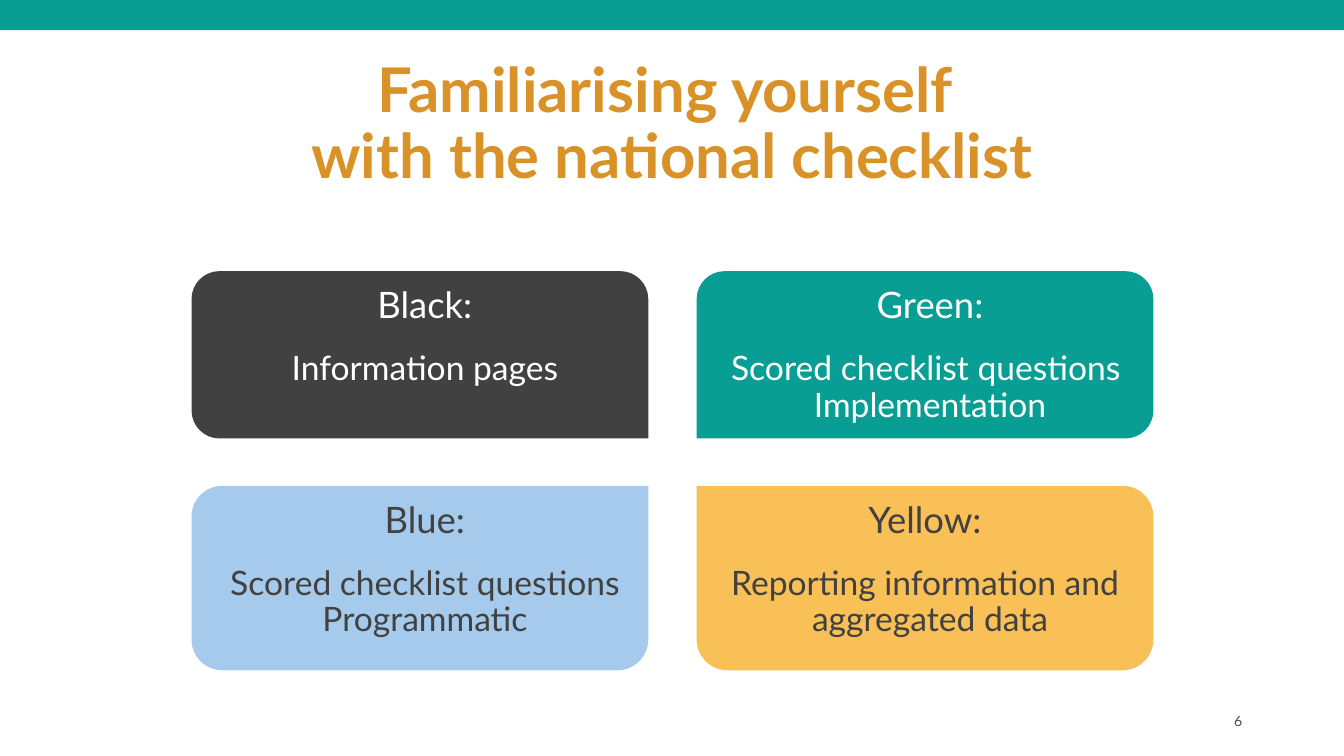
from lxml import etree
from pptx import Presentation
from pptx.dml.color import RGBColor
from pptx.enum.shapes import MSO_SHAPE
from pptx.enum.text import MSO_ANCHOR, PP_ALIGN
from pptx.oxml.ns import qn
from pptx.util import Inches, Pt

TEAL = RGBColor(0x09, 0x9E, 0x93)
GOLD = RGBColor(0xD9, 0x92, 0x28)
CHARCOAL = RGBColor(0x41, 0x41, 0x41)
SKY = RGBColor(0xA6, 0xCA, 0xEC)
YELLOW = RGBColor(0xF8, 0xC0, 0x56)
GREY = RGBColor(0x4A, 0x4A, 0x4C)
WHITE = RGBColor(0xFF, 0xFF, 0xFF)

FONT = "Lato"
CENTER, RIGHT = PP_ALIGN.CENTER, PP_ALIGN.RIGHT
TOP, MIDDLE = MSO_ANCHOR.TOP, MSO_ANCHOR.MIDDLE
RECTANGLE = MSO_SHAPE.RECTANGLE

CORNERS = ["top left", "top right", "bottom right", "bottom left"]
ARC_HANDLE = 0.55  # Bézier handle of a quarter circle, as a share of its radius

CARD_LEFT, CARD_WIDTH, COLUMN_STEP = 1.9, 4.53, 5.01
# Each row: top, height, then its cards from left to right:
# heading, detail, fill, text colour, square corner, first-line indent
CARD_ROWS = [
    (2.69, 1.66, [
        ("Black:", "Information pages", CHARCOAL, WHITE, "bottom right", 0),
        ("Green:", "Scored checklist questions \vImplementation",
         TEAL, WHITE, "bottom left", 0),
    ]),
    (4.82, 1.83, [
        ("Blue:", "Scored checklist questions Programmatic",
         SKY, CHARCOAL, "top right", 0),
        ("Yellow:", "Reporting information and aggregated data",
         YELLOW, CHARCOAL, "top left", -0.1),
    ]),
]


def set_attributes(target, values):
    for attribute, value in values.items():
        setattr(target, attribute, value)


def format_paragraph(paragraph, size, color, bold=False, **layout):
    set_attributes(paragraph, layout)
    set_attributes(paragraph.font, {"name": FONT, "size": Pt(size), "bold": bold})
    paragraph.font.color.rgb = color


def indent_paragraph(paragraph, left, first_line):
    properties = paragraph._p.get_or_add_pPr()
    properties.set("marL", str(Inches(left)))
    properties.set("indent", str(Inches(first_line)))


def paint(shape, color):
    shape.shadow.inherit = False
    shape.fill.solid()
    shape.fill.fore_color.rgb = color
    shape.line.fill.background()


def card_outline(left, top, width, height, square_corner):
    """Return the square corner, then start, two handles and end of each arc."""
    radius = height / 6
    handle = radius * (1 - ARC_HANDLE)
    right, bottom = left + width, top + height
    places = [(left, top), (right, top), (right, bottom), (left, bottom)]
    # Clockwise directions along the edge that leaves each corner
    directions = [(1, 0), (0, 1), (-1, 0), (0, -1)]
    first = CORNERS.index(square_corner)
    points = [places[first]]
    for step in (1, 2, 3):
        corner = (first + step) % 4
        x, y = places[corner]
        in_x, in_y = directions[corner - 1]
        out_x, out_y = directions[corner]
        points += [(x - in_x * reach, y - in_y * reach) for reach in (radius, handle)]
        points += [(x + out_x * reach, y + out_y * reach) for reach in (handle, radius)]
    return [(Inches(x), Inches(y)) for x, y in points]


def round_corners(card):
    """Turn the last three of every four line segments into one curve."""
    segments = list(card._element.iter(qn("a:lnTo")))
    for start in range(0, len(segments), 4):
        arc = segments[start + 1:start + 4]
        curve = etree.Element(qn("a:cubicBezTo"))
        arc[0].addprevious(curve)
        for segment in arc:
            curve.append(segment[0])
            segment.getparent().remove(segment)


def add_card(slide, box, heading, detail, fill, text_color, square_corner, first_line):
    start, *others = card_outline(*box, square_corner)
    builder = slide.shapes.build_freeform(*start)
    builder.add_line_segments(others, close=True)
    card = builder.convert_to_shape()
    round_corners(card)
    paint(card, fill)

    frame = card.text_frame
    set_attributes(frame, {
        "word_wrap": True, "vertical_anchor": TOP,
        "margin_left": Inches(0.08), "margin_right": Inches(0.08),
        "margin_top": Inches(0.16), "margin_bottom": Inches(0.12),
    })
    spacing = {"alignment": CENTER, "line_spacing": 0.9, "space_after": Pt(6)}
    frame.text = heading
    detail_paragraph = frame.add_paragraph()
    detail_paragraph.text = detail
    detail_paragraph.space_before = Pt(12)
    for paragraph, size in zip(frame.paragraphs, (26, 24)):
        indent_paragraph(paragraph, 0.1, first_line)
        format_paragraph(paragraph, size, text_color, **spacing)


def add_cards(slide):
    for top, height, cards in CARD_ROWS:
        for column, card in enumerate(cards):
            left = CARD_LEFT + column * COLUMN_STEP
            add_card(slide, (left, top, CARD_WIDTH, height), *card)


def add_top_band(slide, left, top, width, height):
    band = slide.shapes.add_shape(
        RECTANGLE, *map(Inches, (left, top, width, height)))
    paint(band, TEAL)


def add_title(slide, left, top, width, height):
    title = slide.shapes.title
    set_attributes(title, {
        "left": Inches(left), "top": Inches(top),
        "width": Inches(width), "height": Inches(height),
    })
    title.text_frame.vertical_anchor = MIDDLE
    title.text_frame.text = "Familiarising yourself \vwith the national checklist"
    format_paragraph(title.text_frame.paragraphs[0], 44, GOLD, bold=True,
                     alignment=CENTER, line_spacing=0.9)


def add_page_number(slide, left, top, width, height):
    number = slide.shapes.add_textbox(*map(Inches, (left, top, width, height)))
    set_attributes(number.text_frame, {
        "word_wrap": True, "vertical_anchor": MIDDLE, "text": "6"})
    format_paragraph(number.text_frame.paragraphs[0], 10, GREY, alignment=RIGHT)


def main():
    presentation = Presentation()
    presentation.slide_width = Inches(13.33)
    presentation.slide_height = Inches(7.5)
    title_only = presentation.slide_layouts[5]
    slide = presentation.slides.add_slide(title_only)
    add_top_band(slide, 0, 0, 13.33, 0.3)
    add_title(slide, 0.92, 0.52, 11.5, 1.45)
    add_cards(slide)
    add_page_number(slide, 9.42, 6.95, 3, 0.4)
    presentation.save("out.pptx")


if __name__ == "__main__":
    main()
